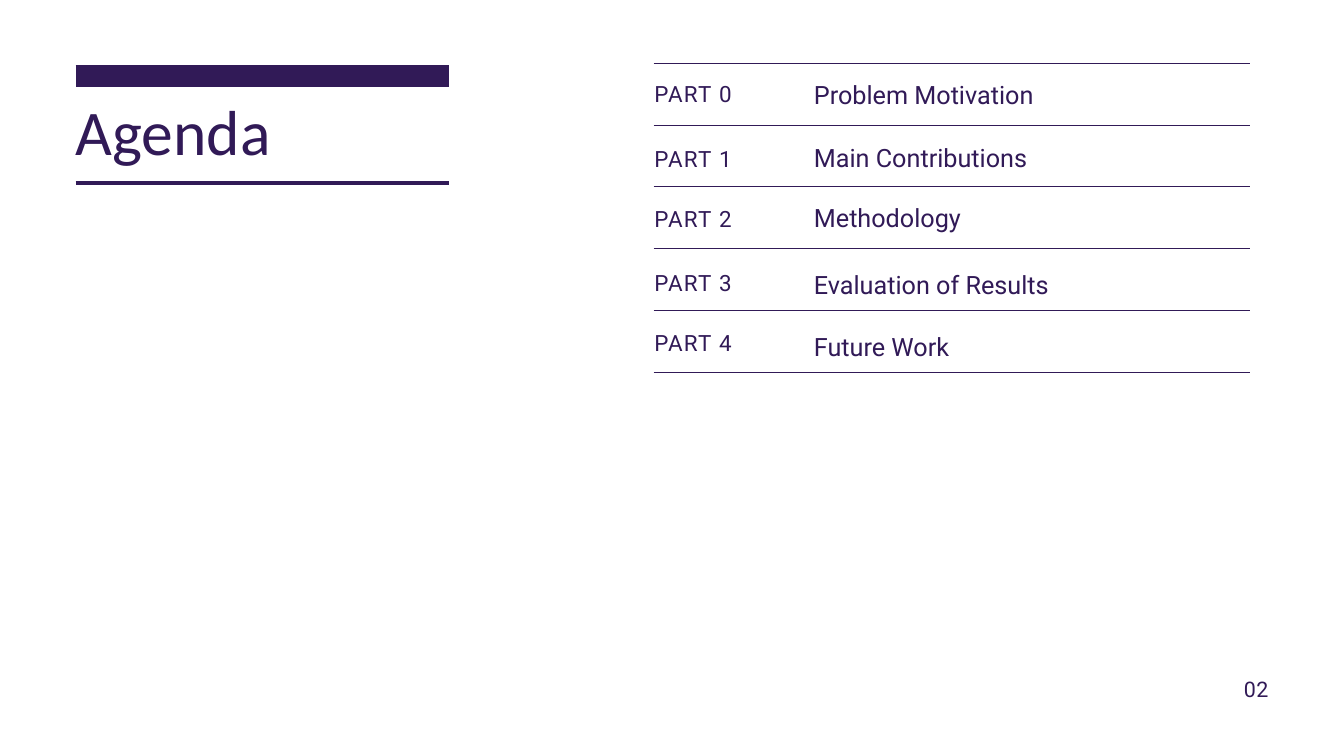
from dataclasses import dataclass

from lxml.etree import SubElement
from pptx import Presentation
from pptx.dml.color import RGBColor as Color
from pptx.enum.shapes import MSO_CONNECTOR as Link
from pptx.enum.text import MSO_AUTO_SIZE as Fit
from pptx.enum.text import PP_ALIGN as Align
from pptx.oxml.ns import qn
from pptx.slide import Slide
from pptx.util import Inches, Pt


@dataclass(frozen=True)
class Style:
    font: str
    size: float
    lead: float
    track: int = 0
    align: Align = Align.LEFT


@dataclass(frozen=True)
class Theme:
    ink: Color = Color(0x31, 0x1A, 0x57)
    head: Style = Style("Calibri", 45.4, 49.9)
    label: Style = Style("Roboto", 16, 20.5, 90)
    topic: Style = Style("Roboto", 18, 24)
    page: Style = Style("Roboto", 15.3, 21.5, 30, Align.RIGHT)
    bar: float = 16
    base: float = 3
    rule: float = 0.75


@dataclass(frozen=True)
class Box:
    col: float
    row: float
    wide: float
    high: float


@dataclass(frozen=True)
class Part:
    topic: str
    label_drop: float
    topic_drop: float


THEME = Theme()
WIDTH, HEIGHT = Inches(13.33), Inches(7.5)
COLS, ROWS = 16, 12.25
TOP = 1.03
PARTS = (
    Part("Problem Motivation", 0.24, 0.2),
    Part("Main Contributions", 0.29, 0.22),
    Part("Methodology", 0.27, 0.2),
    Part("Evaluation of Results", 0.3, 0.28),
    Part("Future Work", 0.28, 0.28),
)


def across(cols: float) -> int:
    return round(WIDTH * cols / COLS)


def down(rows: float) -> int:
    return round(HEIGHT * rows / ROWS)


def write(slide: Slide, text: str, box: Box, style: Style) -> None:
    frame = slide.shapes.add_textbox(
        across(box.col), down(box.row), across(box.wide), down(box.high)
    ).text_frame
    frame.word_wrap = True
    frame.auto_size = Fit.SHAPE_TO_FIT_TEXT
    frame.margin_left = frame.margin_right = 0
    frame.margin_top = frame.margin_bottom = 0
    para = frame.paragraphs[0]
    para.alignment = style.align
    para.line_spacing = Pt(style.lead)
    para.font.name = style.font
    para.font.size = Pt(style.size)
    para.font.color.rgb = THEME.ink
    run = para.add_run()
    run.text = text
    if style.track:
        run._r.get_or_add_rPr().set("spc", str(style.track))


def rule(slide: Slide, left: float, right: float, row: float, weight: float) -> None:
    line = slide.shapes.add_connector(
        Link.STRAIGHT, across(left), down(row), across(right), down(row)
    )
    line.line.color.rgb = THEME.ink
    line.line.width = Pt(weight)
    SubElement(line._element.spPr, qn("a:effectLst"))


def title(slide: Slide) -> None:
    write(slide, "Agenda", Box(0.9, 1.6, 5.61, 1.14), THEME.head)
    rule(slide, 0.9, 5.34, 1.23, THEME.bar)
    rule(slide, 0.9, 5.34, 2.97, THEME.base)


def agenda(slide: Slide) -> None:
    for step in range(len(PARTS) + 1):
        rule(slide, 7.78, 14.88, TOP + step, THEME.rule)
    for step, part in enumerate(PARTS):
        row = TOP + step
        label = Box(7.79, row + part.label_drop, 1.48, 0.46)
        topic = Box(9.69, row + part.topic_drop, 4.67, 0.52)
        write(slide, f"PART {step}", label, THEME.label)
        write(slide, part.topic, topic, THEME.topic)


def main() -> None:
    deck = Presentation()
    deck.slide_width, deck.slide_height = WIDTH, HEIGHT
    slide = deck.slides.add_slide(deck.slide_layouts[6])
    title(slide)
    agenda(slide)
    write(slide, "02", Box(14.7, 10.88, 0.4, 0.46), THEME.page)
    deck.save("out.pptx")


if __name__ == "__main__":
    main()
